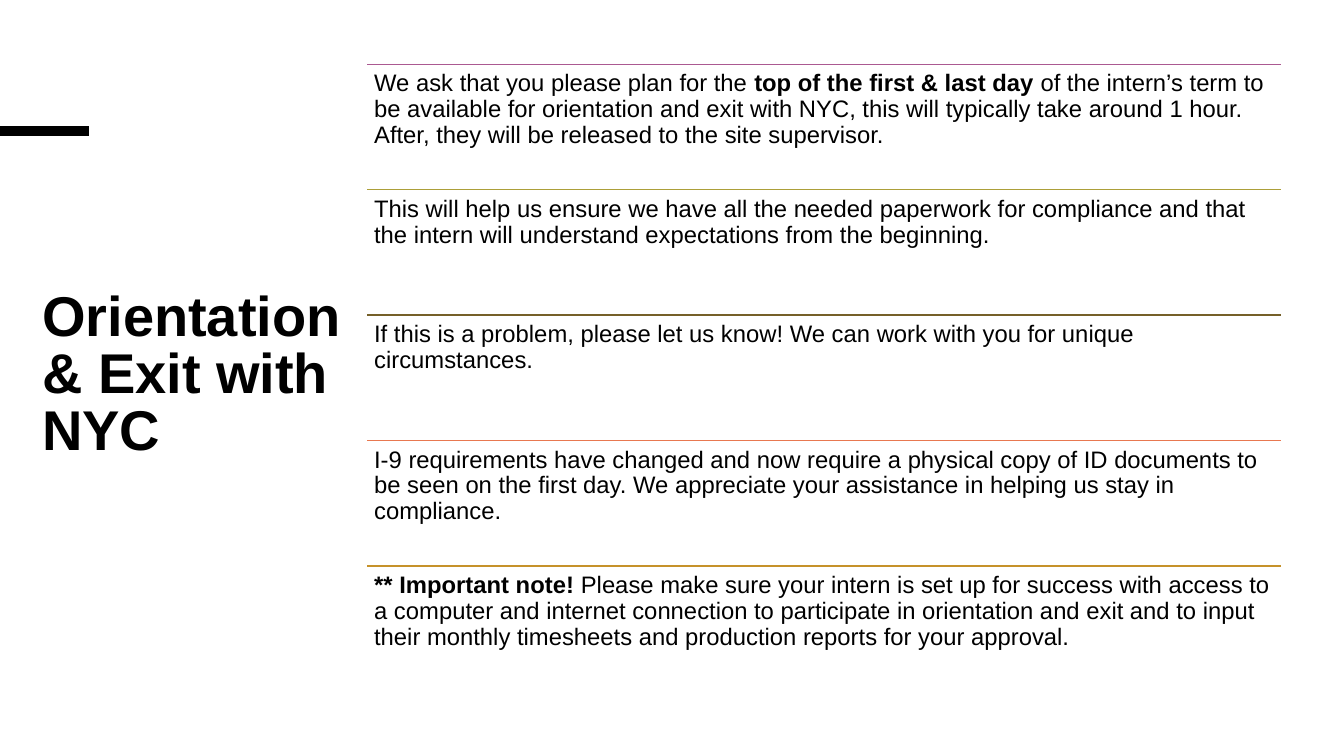
import pptx
import pptx.util
import pptx.dml.color
import pptx.enum.shapes
import pptx.enum.text
import pptx.oxml.ns
import lxml.etree

Cm, Pt = pptx.util.Cm, pptx.util.Pt
FONT = "Arial"
BLACK = "000000"

# Each note: rule colour, then (text, bold) runs
NOTES = [
    ("AB5991", [
        ("We ask that you please plan for the ", False),
        ("top of the first & last day ", True),
        ("of the intern’s term to be available for orientation and exit with "
         "NYC, this will typically take around 1 hour. After, they will be "
         "released to the site supervisor.", False)]),
    ("AC9F39", [
        ("This will help us ensure we have all the needed paperwork for "
         "compliance and that the intern will understand expectations from "
         "the beginning.", False)]),
    ("756029", [
        ("If this is a problem, please let us know! We can work with you for "
         "unique circumstances.", False)]),
    ("E87850", [
        ("I-9 requirements have changed and now require a physical copy of ID "
         "documents to be seen on the first day. We appreciate your "
         "assistance in helping us stay in compliance.", False)]),
    ("C6922A", [
        ("** Important note!", True),
        (" Please make sure your intern is set up for success with access to "
         "a computer and internet connection to participate in orientation "
         "and exit and to input their monthly timesheets and production "
         "reports for your approval.", False)]),
]


def rgb(value):
    return pptx.dml.color.RGBColor.from_string(value)


def format_run(r, size, bold):
    r.font.name = FONT
    r.font.size = Pt(size)
    r.font.bold = bold
    r.font.color.rgb = rgb(BLACK)


def add_rule(s, left, top, width, color, weight):
    """Horizontal line without a shadow."""
    line = s.shapes.add_connector(
        pptx.enum.shapes.MSO_CONNECTOR.STRAIGHT,
        Cm(left), Cm(top), Cm(left + width), Cm(top))
    line.line.color.rgb = rgb(color)
    line.line.width = Pt(weight)
    lxml.etree.SubElement(line._element.spPr, pptx.oxml.ns.qn("a:effectLst"))


def add_title(s, left, top, width, height):
    sp = s.shapes.title
    sp.left, sp.top, sp.width, sp.height = Cm(left), Cm(top), Cm(width), Cm(height)
    tf = sp.text_frame
    tf.text = "Orientation & Exit with NYC"
    tf.word_wrap = True
    tf.auto_size = pptx.enum.text.MSO_AUTO_SIZE.NONE
    tf.vertical_anchor = pptx.enum.text.MSO_ANCHOR.TOP
    p = tf.paragraphs[0]
    p.alignment = pptx.enum.text.PP_ALIGN.LEFT
    p.line_spacing = 0.85
    format_run(p.runs[0], 40, True)


def add_note(s, left, top, width, height, color, runs):
    """One note under its coloured rule."""
    add_rule(s, left, top, width, color, 1)
    sp = s.shapes.add_textbox(Cm(left), Cm(top), Cm(width), Cm(height))
    tf = sp.text_frame
    tf.word_wrap = True
    tf.margin_left = tf.margin_right = tf.margin_top = tf.margin_bottom = Cm(0.18)
    p = tf.paragraphs[0]
    p.line_spacing = 0.9
    for text, bold in runs:
        r = p.add_run()
        r.text = text
        format_run(r, 17, bold)


def add_notes(s, left, top, width, height):
    """Stack the notes in rows of equal height."""
    row = height / len(NOTES)
    for i, (color, runs) in enumerate(NOTES):
        add_note(s, left, top + i * row, width, row, color, runs)


def main():
    prs = pptx.Presentation()
    prs.slide_width, prs.slide_height = Cm(33.87), Cm(19.05)
    s = prs.slides.add_slide(prs.slide_layouts[5])

    # Accent bar and title on the left
    add_rule(s, 0, 3.3, 2.24, BLACK, 6.75)
    add_title(s, 0.81, 7.19, 9.3, 11)

    # Notes on the right
    add_notes(s, 9.25, 1.62, 23.04, 15.8)

    prs.save("out.pptx")


if __name__ == "__main__":
    main()
